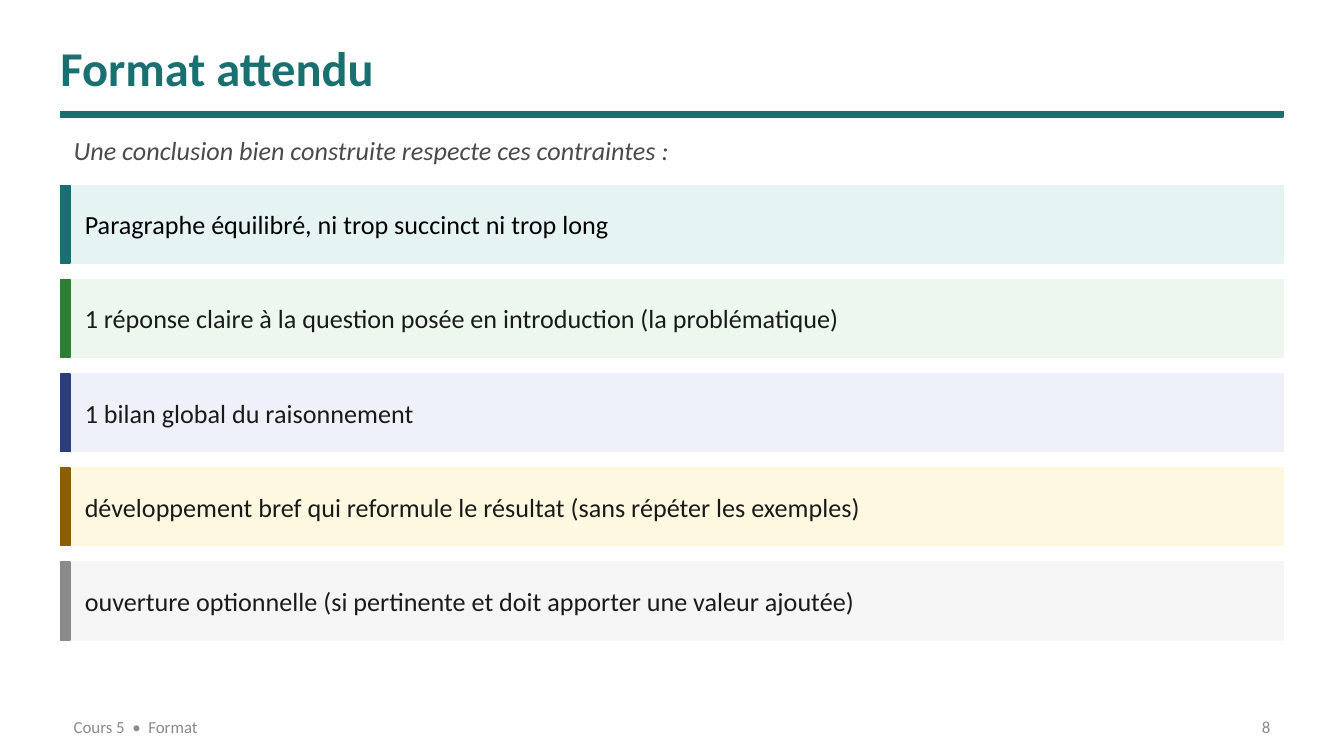
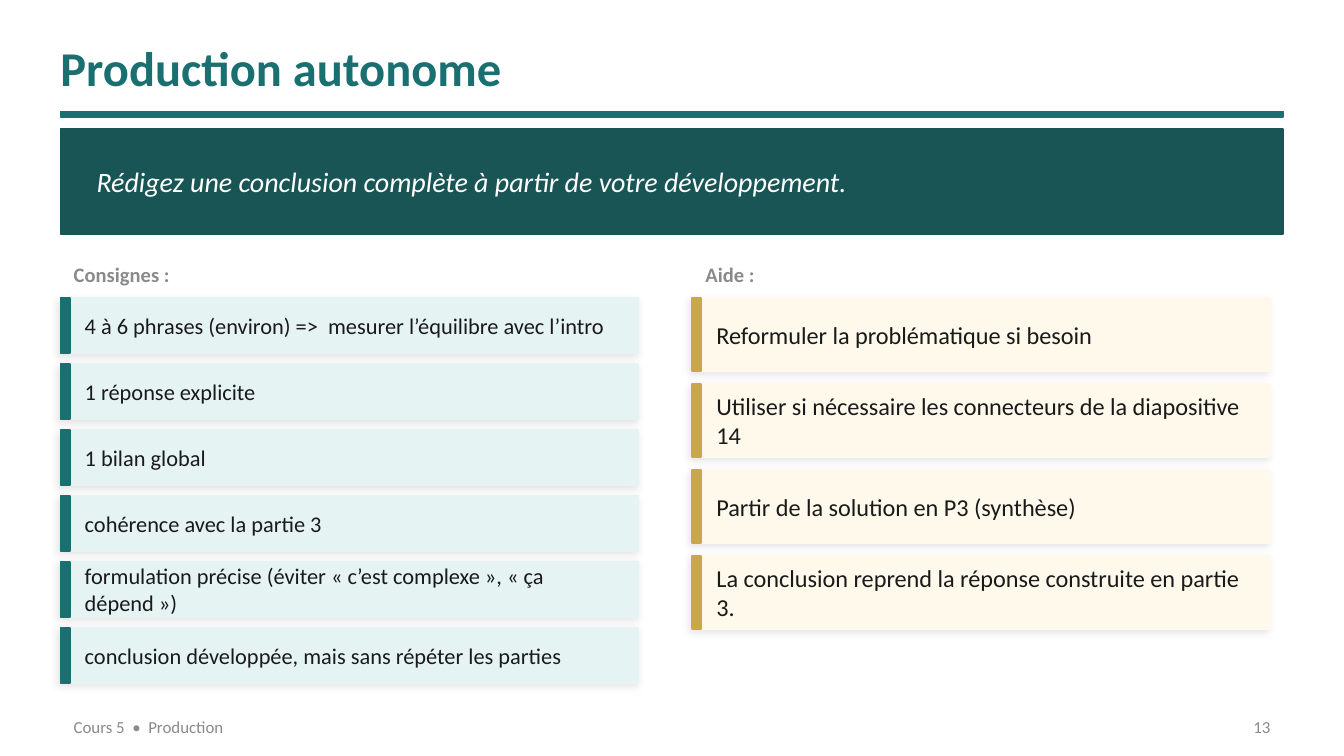
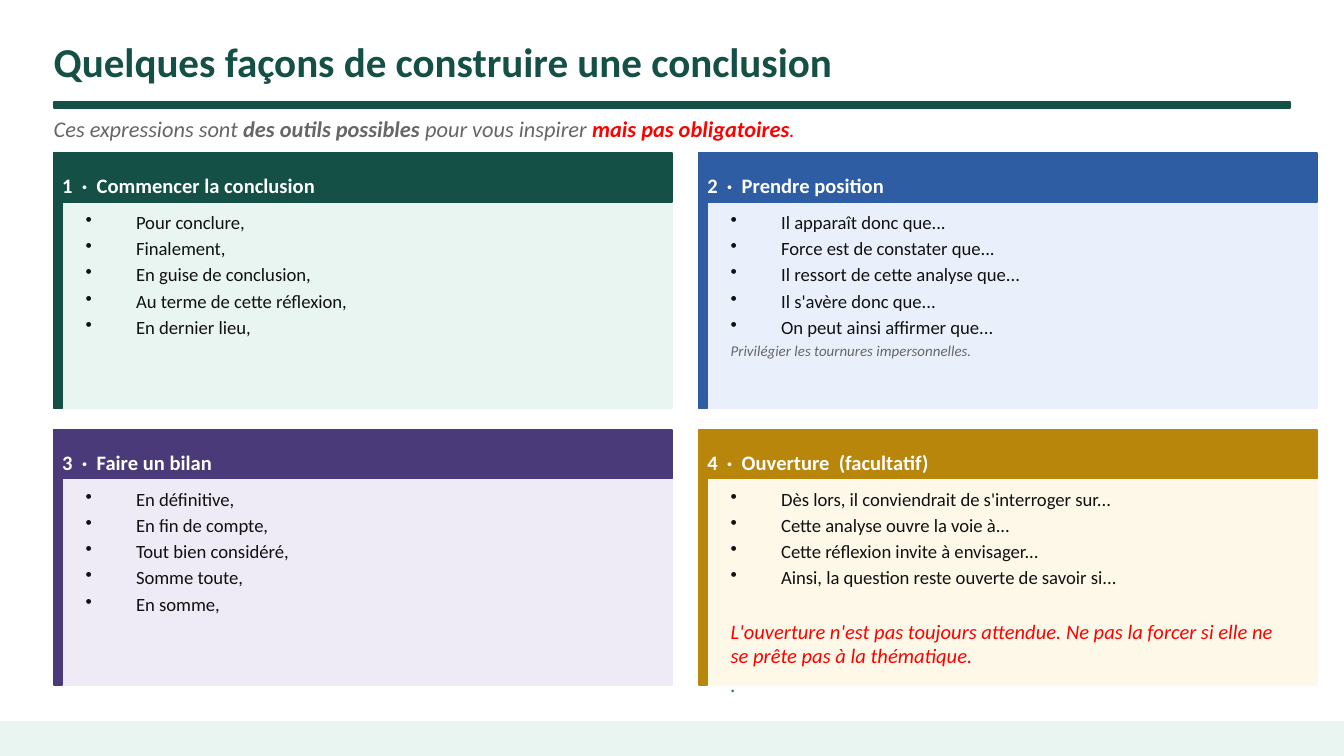
from collections import namedtuple

from lxml.etree import SubElement
from pptx import Presentation
from pptx.dml.color import RGBColor
from pptx.enum.shapes import MSO_SHAPE as Preset
from pptx.enum.text import MSO_ANCHOR as Anchor, PP_ALIGN as Align
from pptx.oxml.ns import qn
from pptx.util import Pt

FONT = "Calibri"
TEAL = RGBColor(0x1A, 0x70, 0x70)
DARK_TEAL = RGBColor(0x1A, 0x55, 0x55)
PALE_TEAL = RGBColor(0xE6, 0xF3, 0xF3)
FOREST = RGBColor(0x14, 0x50, 0x45)
MINT = RGBColor(0xE8, 0xF5, 0xF1)
GREEN = RGBColor(0x2E, 0x7D, 0x32)
PALE_GREEN = RGBColor(0xED, 0xF7, 0xEE)
NAVY = RGBColor(0x2C, 0x3E, 0x7A)
PALE_NAVY = RGBColor(0xEE, 0xF1, 0xFA)
BLUE = RGBColor(0x2E, 0x5D, 0xA4)
PALE_BLUE = RGBColor(0xEA, 0xF0, 0xFB)
PURPLE = RGBColor(0x4A, 0x3A, 0x7A)
PALE_PURPLE = RGBColor(0xEE, 0xEB, 0xF7)
BROWN = RGBColor(0x8B, 0x5E, 0x00)
PALE_YELLOW = RGBColor(0xFF, 0xF8, 0xE1)
GOLD = RGBColor(0xC8, 0xA8, 0x4B)
CREAM = RGBColor(0xFE, 0xF9, 0xEB)
OCHRE = RGBColor(0xB8, 0x86, 0x0B)
PALE_OCHRE = RGBColor(0xFD, 0xF8, 0xE8)
GREY = RGBColor(0x8A, 0x8A, 0x8A)
PALE_GREY = RGBColor(0xF5, 0xF5, 0xF5)
SLATE = RGBColor(0x4A, 0x4A, 0x4A)
MID_GREY = RGBColor(0x66, 0x66, 0x66)
INK = RGBColor(0x1A, 0x1A, 0x1A)
CARD_INK = RGBColor(0x11, 0x11, 0x11)
BLACK = RGBColor(0x00, 0x00, 0x00)
WHITE = RGBColor(0xFF, 0xFF, 0xFF)
RED = RGBColor(0xFF, 0x00, 0x00)

Box = namedtuple("Box", "left top width height")
Row = namedtuple("Row", "text accent fill color")
RowStyle = namedtuple("RowStyle", "size gap text_trim inset shadow")
Note = namedtuple("Note", "text size color space_before")
Card = namedtuple("Card", "title accent fill phrases notes")

SLIDE_WIDTH, SLIDE_HEIGHT = 720, 405
DEFAULT_INSETS = (7.2, 3.6, 7.2, 3.6)
NO_INSETS = (0, 0, 0, 0)
COURSE_TITLE = Box(32.4, 14.4, 655.2, 43.2)
COURSE_RULE = Box(32.4, 59.76, 655.2, 3)
TOOLBOX_TITLE = Box(28.8, 12.96, 662.4, 39.6)
TOOLBOX_RULE = Box(28.8, 54.72, 662.4, 3)

CONSTRAINTS = [
    Row("Paragraphe équilibré, ni trop succinct ni trop long", TEAL, PALE_TEAL, BLACK),
    Row("1 réponse claire à la question posée en introduction (la problématique)",
        GREEN, PALE_GREEN, INK),
    Row("1 bilan global du raisonnement", NAVY, PALE_NAVY, INK),
    Row("développement bref qui reformule le résultat (sans répéter les exemples)",
        BROWN, PALE_YELLOW, INK),
    Row("ouverture optionnelle (si pertinente et doit apporter une valeur ajoutée)",
        GREY, PALE_GREY, INK),
]
INSTRUCTIONS = [
    "4 à 6 phrases (environ) =>  mesurer l’équilibre avec l’intro",
    "1 réponse explicite",
    "1 bilan global",
    "cohérence avec la partie 3",
    "formulation précise (éviter « c’est complexe », « ça dépend »)",
    "conclusion développée, mais sans répéter les parties",
]
HINTS = [
    "Reformuler la problématique si besoin",
    "Utiliser si nécessaire les connecteurs de la diapositive 14",
    "Partir de la solution en P3 (synthèse)",
    "La conclusion reprend la réponse construite en partie 3.",
]
CARDS = [
    Card("1  ·  Commencer la conclusion", FOREST, MINT,
         ["Pour conclure,", "Finalement,", "En guise de conclusion,",
          "Au terme de cette réflexion,", "En dernier lieu,"], []),
    Card("2  ·  Prendre position", BLUE, PALE_BLUE,
         ["Il apparaît donc que...", "Force est de constater que...",
          "Il ressort de cette analyse que...", "Il s'avère donc que...",
          "On peut ainsi affirmer que..."],
         [Note("Privilégier les tournures impersonnelles.", 8, MID_GREY, 0)]),
    Card("3  ·  Faire un bilan", PURPLE, PALE_PURPLE,
         ["En définitive,", "En fin de compte,", "Tout bien considéré,",
          "Somme toute,", "En somme,"], []),
    Card("4  ·  Ouverture  (facultatif)", OCHRE, PALE_OCHRE,
         ["Dès lors, il conviendrait de s'interroger sur...",
          "Cette analyse ouvre la voie à...", "Cette réflexion invite à envisager...",
          "Ainsi, la question reste ouverte de savoir si..."],
         [Note("L'ouverture n'est pas toujours attendue. Ne pas la forcer si elle ne "
               "se prête pas à la thématique.", 11, RED, 14),
          Note(".", 11, TEAL, 0)]),
]


def to_points(box):
    """Return the four lengths of a box as Pt."""
    return [Pt(length) for length in box]


def add_block(slide, box, color, shadow=False):
    """Draw a plain rectangle, with a soft shadow on request."""
    shape = slide.shapes.add_shape(Preset.RECTANGLE, *to_points(box))
    shape.shadow.inherit = False
    shape.fill.solid()
    shape.fill.fore_color.rgb = color
    shape.line.color.rgb = color
    shape.line.width = Pt(1)
    if shadow:
        effects = shape._element.spPr.find(qn("a:effectLst"))
        outer = SubElement(effects, qn("a:outerShdw"), blurRad=str(Pt(4)),
                           dist=str(Pt(2)), dir="8100000", algn="bl", rotWithShape="0")
        black = SubElement(outer, qn("a:srgbClr"), val="000000")
        SubElement(black, qn("a:alpha"), val="10000")


def add_frame(slide, box, insets=DEFAULT_INSETS, anchor=Anchor.MIDDLE):
    """Add a wrapping text box and return its text frame."""
    frame = slide.shapes.add_textbox(*to_points(box)).text_frame
    frame.word_wrap = True
    frame.vertical_anchor = anchor
    (frame.margin_left, frame.margin_top,
     frame.margin_right, frame.margin_bottom) = to_points(insets)
    return frame


def add_run(paragraph, text, size, color, bold=False, italic=False):
    """Append a formatted run to a paragraph."""
    run = paragraph.add_run()
    run.text = text
    run.font.name = FONT
    run.font.size = Pt(size)
    run.font.color.rgb = color
    run.font.bold = bold
    run.font.italic = italic


def add_label(slide, box, text, size, color, insets=DEFAULT_INSETS, align=Align.LEFT,
              bold=False, italic=False):
    """Add a text box holding one run."""
    paragraph = add_frame(slide, box, insets).paragraphs[0]
    paragraph.alignment = align
    add_run(paragraph, text, size, color, bold, italic)


def add_heading(slide, title_box, rule_box, text, size, color):
    """Draw the slide title and the rule below it."""
    add_label(slide, title_box, text, size, color, NO_INSETS, bold=True)
    add_block(slide, rule_box, color)


def add_footer(slide, topic, number):
    """Write the course topic and the page number."""
    add_label(slide, Box(32.4, 382.32, 468, 14.4), f"Cours 5  •  {topic}", 9, GREY)
    add_label(slide, Box(619.2, 382.32, 68.4, 14.4), number, 9, GREY, align=Align.RIGHT)


def add_course_slide(presentation, title, topic, number):
    """Add a slide with the course heading and footer."""
    slide = add_blank_slide(presentation)
    add_heading(slide, COURSE_TITLE, COURSE_RULE, title, 26, TEAL)
    add_footer(slide, topic, number)
    return slide


def add_blank_slide(presentation):
    """Add a slide on the blank layout."""
    return presentation.slides.add_slide(presentation.slide_layouts[6])


def add_rows(slide, first_box, rows, style):
    """Stack accented rows downward from the first box."""
    for index, row in enumerate(rows):
        top = first_box.top + index * (first_box.height + style.gap)
        box = first_box._replace(top=top)
        add_block(slide, box, row.fill, style.shadow)
        add_block(slide, box._replace(width=5), row.accent)
        text_box = box._replace(left=box.left + 13, width=box.width - style.text_trim)
        add_label(slide, text_box, row.text, style.size, row.color,
                  (0, 0, style.inset, 0))


def add_column(slide, first_box, heading, texts, accent, fill, style):
    """Draw a column heading with its stack of rows."""
    add_label(slide, first_box._replace(top=first_box.top - 23, height=20.16),
              heading, 11, GREY, bold=True)
    add_rows(slide, first_box, [Row(text, accent, fill, INK) for text in texts], style)


def add_bullet(paragraph):
    """Give a paragraph a hanging round bullet."""
    properties = paragraph._p.get_or_add_pPr()
    properties.set("marL", str(Pt(27)))
    properties.set("indent", str(-Pt(27)))
    SubElement(properties, qn("a:buChar"), char="•")


def add_card(slide, box, card):
    """Draw a titled card with bulleted phrases and closing notes."""
    add_block(slide, box, card.fill)
    add_block(slide, box._replace(width=4.5), card.accent)
    header = box._replace(height=26)
    add_block(slide, header, card.accent)
    add_label(slide, header._replace(left=box.left + 4.5, width=box.width - 4.5),
              card.title, 11, WHITE, (0, 8, 0, 0), bold=True)
    body = Box(box.left + 10, box.top + 27.36, box.width - 14.4, 105.12)
    frame = add_frame(slide, body, anchor=Anchor.TOP)
    for index, phrase in enumerate(card.phrases):
        paragraph = frame.add_paragraph() if index else frame.paragraphs[0]
        add_bullet(paragraph)
        paragraph.space_after = Pt(2)
        add_run(paragraph, phrase, 10, CARD_INK)
    for note in card.notes:
        paragraph = frame.add_paragraph()
        paragraph.space_before = Pt(note.space_before)
        paragraph.space_after = Pt(2)
        add_run(paragraph, note.text, note.size, note.color, italic=True)


def build_format_slide(presentation):
    """Build the slide listing the expected format."""
    slide = add_course_slide(presentation, "Format attendu", "Format", "8")
    add_label(slide, Box(32.4, 69.12, 655.2, 23.04),
              "Une conclusion bien construite respecte ces contraintes :",
              14, SLATE, italic=True)
    add_rows(slide, Box(32.4, 99.36, 655.2, 41.76), CONSTRAINTS,
             RowStyle(14, 8.64, 23, 6, False))


def build_production_slide(presentation):
    """Build the slide setting the writing task."""
    slide = add_course_slide(presentation, "Production autonome", "Production", "13")
    banner = Box(32.4, 69.12, 655.2, 56.16)
    add_block(slide, banner, DARK_TEAL)
    add_label(slide, banner._replace(left=banner.left + 12.24, width=633.6),
              "Rédigez une conclusion complète à partir de votre développement.",
              15, WHITE, italic=True)
    add_column(slide, Box(32.4, 159.84, 309.6, 29.52), "Consignes :", INSTRUCTIONS,
               TEAL, PALE_TEAL, RowStyle(12, 5.76, 18.72, 8, True))
    add_column(slide, Box(370.8, 159.84, 309.6, 38.88), "Aide :", HINTS,
               GOLD, CREAM, RowStyle(13, 7.2, 18.72, 8, True))


def build_toolbox_slide(presentation):
    """Build the slide of useful phrases in four cards."""
    slide = add_blank_slide(presentation)
    add_heading(slide, TOOLBOX_TITLE, TOOLBOX_RULE,
                "Quelques façons de construire une conclusion", 22, FOREST)
    intro = add_frame(slide, Box(28.8, 59.04, 662.4, 20.16), NO_INSETS).paragraphs[0]
    for text, size, color, bold in [
        ("Ces expressions sont ", 12, MID_GREY, False),
        ("des outils possibles ", 12, MID_GREY, True),
        ("pour vous inspirer ", 12, MID_GREY, False),
        ("mais pas obligatoires", 12, RED, True),
        (".", 9, RED, True),
    ]:
        add_run(intro, text, size, color, bold, italic=True)
    for index, card in enumerate(CARDS):
        row, column = divmod(index, 2)
        add_card(slide, Box(28.8 + column * 345.6, 82.08 + row * 148.32, 331.2, 136.8),
                 card)
    add_block(slide, Box(0, 386.64, SLIDE_WIDTH, 18.36), MINT)


def main():
    """Build and save the presentation."""
    presentation = Presentation()
    presentation.slide_width = Pt(SLIDE_WIDTH)
    presentation.slide_height = Pt(SLIDE_HEIGHT)
    build_format_slide(presentation)
    build_production_slide(presentation)
    build_toolbox_slide(presentation)
    presentation.save("out.pptx")


if __name__ == "__main__":
    main()
